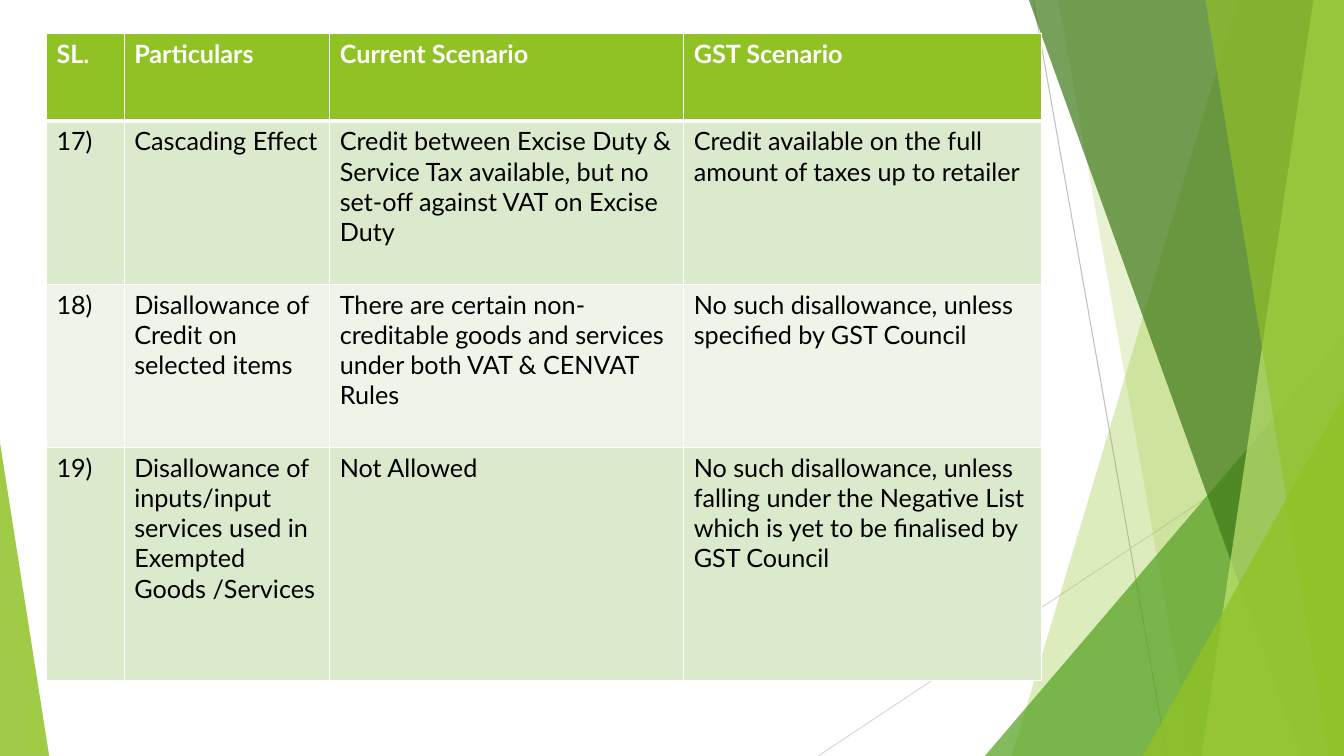
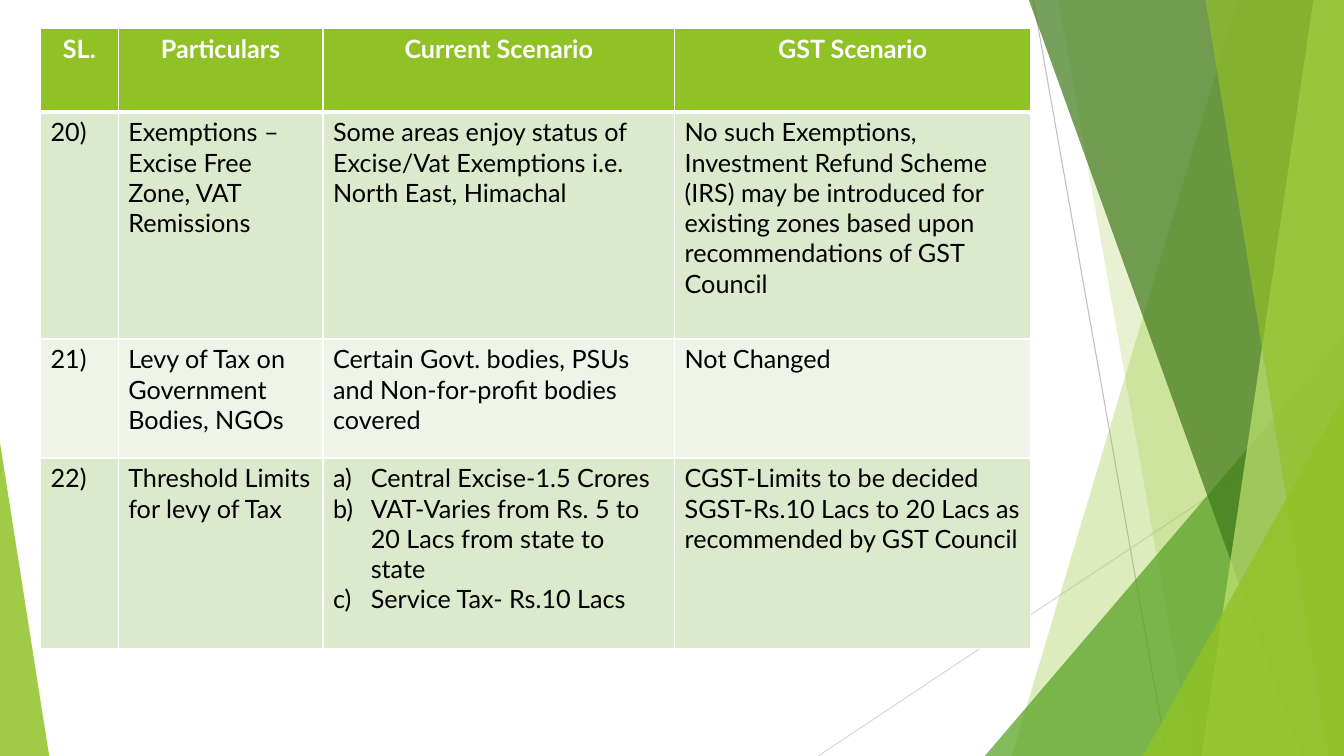
from lxml import etree
from pptx import Presentation
from pptx.dml.color import RGBColor
from pptx.enum import shapes, text
from pptx.oxml.ns import qn
from pptx.util import Cm, Pt

WIDE, HIGH = 33.87, 19.05

WHITE = RGBColor(0xFF, 0xFF, 0xFF)
BLACK = RGBColor(0x00, 0x00, 0x00)
LIME = RGBColor(0x90, 0xC2, 0x26)
PALE = RGBColor(0xC0, 0xE4, 0x74)
GREEN = RGBColor(0x54, 0xA0, 0x21)
DARK = RGBColor(0x3F, 0x78, 0x19)
ODD = RGBColor(0xDB, 0xE9, 0xCD)
EVEN = RGBColor(0xEE, 0xF4, 0xE8)
GREY = RGBColor(0xBF, 0xBF, 0xBF)
SILVER = RGBColor(0xD9, 0xD9, 0xD9)

HEADS = ["SL.", "Particulars", "Current Scenario", "GST Scenario"]


def write(frame, words, font="Lato", size=18, color=BLACK, bold=False,
          align=text.PP_ALIGN.LEFT, letter=False):
    """Fill a text frame, one paragraph per line; letter numbers them a), b), c)."""
    frame.word_wrap = True
    for i, line in enumerate(words.split("\n")):
        para = frame.add_paragraph() if i else frame.paragraphs[0]
        if letter:
            props = para._p.get_or_add_pPr()
            props.set("marL", str(Cm(0.95)))
            props.set("indent", str(-Cm(0.95)))
            etree.SubElement(props, qn("a:buAutoNum"), type="alphaLcParenR")
        para.alignment = align
        run = para.add_run()
        run.text = line
        run.font.name, run.font.size = font, Pt(size)
        run.font.bold, run.font.color.rgb = bold, color


def edge(cell, top=1, base=1):
    """Draw white cell borders; top and base are widths in points."""
    props = cell._tc.get_or_add_tcPr()
    for side, width in (("L", 1), ("R", 1), ("T", top), ("B", base)):
        line = etree.SubElement(props, qn("a:ln" + side), w=str(Pt(width)))
        fill = etree.SubElement(line, qn("a:solidFill"))
        etree.SubElement(fill, qn("a:srgbClr"), val=str(WHITE))


class Deck:
    def __init__(self):
        self.file = Presentation()
        self.file.slide_width, self.file.slide_height = Cm(WIDE), Cm(HIGH)
        self.slide = None

    def page(self):
        """Start a slide with the shared green facets."""
        self.slide = self.file.slides.add_slide(self.file.slide_layouts[6])
        self.line(26.04, 0, 29.41, HIGH, GREY)
        self.line(WIDE, 10.24, 20.62, HIGH, SILVER)
        self.facet(31.19, 25.5, LIME, 30)
        self.facet(26.67, 30.05, LIME, 20)
        self.wedge(24.82, 8.46, WIDE - 24.82, GREEN, 72)
        self.facet(25.93, 32.79, DARK, 70)
        self.facet(33.1, 30.28, PALE, 70)
        self.facet(30.38, 33.48, LIME, 65)
        self.wedge(28.8, 9.98, WIDE - 28.8, LIME, 80)
        self.wedge(0, 11.15, 1.24, LIME, 85, peak=0)

    def line(self, x1, y1, x2, y2, color):
        line = self.slide.shapes.add_connector(
            shapes.MSO_CONNECTOR.STRAIGHT, Cm(x1), Cm(y1), Cm(x2), Cm(y2))
        line.line.color.rgb, line.line.width = color, Pt(0.75)
        etree.SubElement(line._element.spPr, qn("a:effectLst"))

    def paint(self, shape, color, alpha):
        shape.shadow.inherit = False
        shape.line.fill.background()
        shape.fill.solid()
        shape.fill.fore_color.rgb = color
        tint = shape._element.spPr.find(".//" + qn("a:srgbClr"))
        etree.SubElement(tint, qn("a:alpha"), val=str(alpha * 1000))

    def facet(self, top, base, color, alpha):
        """Full-height band from a slanted left side to the slide's right edge."""
        path = self.slide.shapes.build_freeform(Cm(top), 0)
        path.add_line_segments([(Cm(WIDE), 0), (Cm(WIDE), Cm(HIGH)), (Cm(base), Cm(HIGH))])
        self.paint(path.convert_to_shape(), color, alpha)

    def wedge(self, left, top, width, color, alpha, peak=1):
        """Triangle standing on the slide's bottom edge."""
        shape = self.slide.shapes.add_shape(
            shapes.MSO_SHAPE.ISOSCELES_TRIANGLE,
            Cm(left), Cm(top), Cm(width), Cm(HIGH - top))
        shape.adjustments[0] = peak
        self.paint(shape, color, alpha)

    def table(self, left, top, cols, rows, body, align, listed=()):
        """Draw the heads and body; listed holds the (row, column) of lettered cells."""
        grid = self.slide.shapes.add_table(
            len(rows), len(cols), Cm(left), Cm(top), Cm(sum(cols)), Cm(sum(rows))).table
        grid.horz_banding = False
        for col, width in zip(grid.columns, cols):
            col.width = Cm(width)
        for r, (high, words) in enumerate(zip(rows, [HEADS] + body)):
            grid.rows[r].height = Cm(high)
            for c, word in enumerate(words):
                cell = grid.cell(r, c)
                edge(cell, top=3 if r == 1 else 1, base=1 if r else 3)
                cell.fill.solid()
                if r == 0:
                    cell.fill.fore_color.rgb = LIME
                    write(cell.text_frame, word, color=WHITE, bold=True, align=align)
                else:
                    cell.fill.fore_color.rgb = ODD if r % 2 else EVEN
                    write(cell.text_frame, word, letter=(r, c) in listed)


def main():
    deck = Deck()

    deck.page()
    deck.table(1.17, 0.84, [1.96, 5.18, 8.92, 9.02], [2.21, 4.11, 4.11, 5.87], [
        ["17)", "Cascading Effect",
         "Credit between Excise Duty & Service Tax available, but no set-off "
         "against VAT on Excise Duty",
         "Credit available on the full amount of taxes up to retailer"],
        ["18)", "Disallowance of Credit on selected items",
         "There are certain non-creditable goods and services under both VAT & CENVAT Rules",
         "No such disallowance, unless specified by GST Council"],
        ["19)", "Disallowance of inputs/input services used in Exempted Goods /Services",
         "Not Allowed",
         "No such disallowance, unless falling under the Negative List which is "
         "yet to be finalised by GST Council"],
    ], text.PP_ALIGN.LEFT)

    deck.page()
    deck.table(1.02, 0.71, [1.96, 5.16, 8.86, 8.97], [2.11, 5.72, 3, 4.8], [
        ["20)", "Exemptions –Excise Free Zone, VAT Remissions",
         "Some areas enjoy status of Excise/Vat Exemptions i.e. North East, Himachal",
         "No such Exemptions, Investment Refund Scheme (IRS) may be introduced for "
         "existing zones based upon recommendations of GST Council"],
        ["21)", "Levy of Tax on Government Bodies, NGOs",
         "Certain Govt. bodies, PSUs and Non-for-profit bodies covered",
         "Not Changed"],
        ["22)", "Threshold Limits for levy of Tax",
         "Central Excise-1.5 Crores\n"
         "VAT-Varies from Rs. 5 to 20 Lacs from state to state\n"
         "Service Tax- Rs.10 Lacs",
         "CGST-Limits to be decided\n"
         "SGST-Rs.10 Lacs to 20 Lacs as recommended by GST Council"],
    ], text.PP_ALIGN.CENTER, listed=[(3, 2)])

    deck.file.save("out.pptx")


if __name__ == "__main__":
    main()
